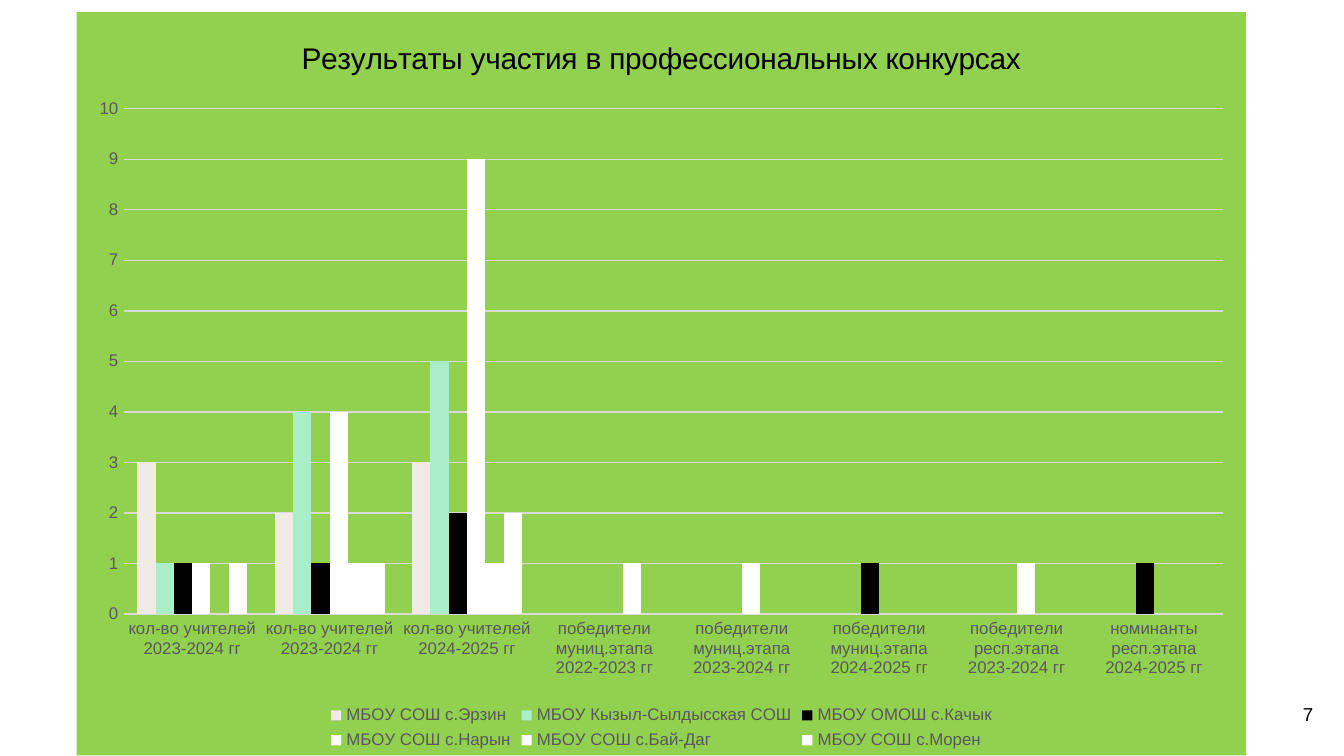
from lxml.etree import SubElement
from pptx import Presentation
from pptx.chart.data import CategoryChartData
from pptx.dml.color import RGBColor
from pptx.enum.chart import XL_CHART_TYPE, XL_LEGEND_POSITION, XL_TICK_MARK
from pptx.enum.text import MSO_ANCHOR, PP_ALIGN
from pptx.oxml import parse_xml
from pptx.oxml.ns import nsdecls, qn
from pptx.util import Cm, Pt

FONT = "Arial"
BLACK = RGBColor(0x00, 0x00, 0x00)
WHITE = RGBColor(0xFF, 0xFF, 0xFF)
GRAY = RGBColor(0x59, 0x59, 0x59)
GRID = RGBColor(0xD9, 0xD9, 0xD9)
GREEN = RGBColor(0x92, 0xD0, 0x50)
CREAM = RGBColor(0xF0, 0xEC, 0xE5)
MINT = RGBColor(0xA9, 0xED, 0xC9)

TITLE = "Результаты участия в профессиональных конкурсах"
PAGE = "7"
STAGES = [
    "кол-во учителей 2023-2024 гг",
    "кол-во учителей 2023-2024 гг",
    "кол-во учителей 2024-2025 гг",
    "победители муниц.этапа 2022-2023 гг",
    "победители муниц.этапа 2023-2024 гг",
    "победители муниц.этапа 2024-2025 гг",
    "победители респ.этапа 2023-2024 гг",
    "номинанты респ.этапа 2024-2025 гг",
]
SCHOOLS = [
    ("МБОУ СОШ с.Эрзин", CREAM, [3, 2, 3, None, None, None, None, None]),
    ("МБОУ Кызыл-Сылдысская СОШ", MINT, [1, 4, 5, None, None, None, None, None]),
    ("МБОУ ОМОШ с.Качык", BLACK, [1, 1, 2, None, None, 1, None, 1]),
    ("МБОУ СОШ с.Нарын", WHITE, [1, 4, 9, None, 1, None, 1, None]),
    ("МБОУ СОШ с.Бай-Даг", WHITE, [0, 1, 1, 1, None, None, None, None]),
    ("МБОУ СОШ с.Морен", WHITE, [1, 1, 2, None, None, None, None, None]),
]
PLOT = {"x": 0.04, "y": 0.13, "w": 0.94, "h": 0.68}


def style(font, size, color):
    font.name = FONT
    font.size = Pt(size)
    font.bold = False
    font.color.rgb = color


def write(frame, text, size=10, color=BLACK, align=PP_ALIGN.CENTER):
    para = frame.paragraphs[0]
    para.alignment = align
    run = para.add_run()
    run.text = text
    style(run.font, size, color)


def paint(chart, color):
    fill = parse_xml(
        f'<c:spPr {nsdecls("c", "a")}><a:solidFill><a:srgbClr val="{color}"/>'
        "</a:solidFill><a:ln><a:noFill/></a:ln></c:spPr>"
    )
    chart.element.find(qn("c:chart")).addnext(fill)


def place(chart, spots):
    area = chart.element.find(qn("c:chart")).find(qn("c:plotArea"))
    for old in area.findall(qn("c:layout")):
        area.remove(old)
    layout = parse_xml(f'<c:layout {nsdecls("c")}/>')
    area.insert(0, layout)
    manual = SubElement(layout, qn("c:manualLayout"))
    rules = [("layoutTarget", "inner"), ("xMode", "edge"), ("yMode", "edge")]
    for tag, value in rules + list(spots.items()):
        SubElement(manual, qn(f"c:{tag}")).set("val", str(value))


def add_results(slide):
    data = CategoryChartData()
    data.categories = STAGES
    for name, _, values in SCHOOLS:
        data.add_series(name, values)
    chart = slide.shapes.add_chart(
        XL_CHART_TYPE.COLUMN_CLUSTERED, Cm(1.45), Cm(0.23), Cm(22.1), Cm(14.05), data
    ).chart
    style(chart.font, 10, BLACK)
    paint(chart, GREEN)
    place(chart, PLOT)

    chart.has_title = True
    chart.chart_title.include_in_layout = False
    write(chart.chart_title.text_frame, TITLE, size=16)

    chart.has_legend = True
    chart.legend.position = XL_LEGEND_POSITION.BOTTOM
    chart.legend.include_in_layout = False
    style(chart.legend.font, 9, GRAY)

    for axis in (chart.category_axis, chart.value_axis):
        axis.major_tick_mark = axis.minor_tick_mark = XL_TICK_MARK.NONE
        axis.format.line.fill.background()
        style(axis.tick_labels.font, 9, GRAY)
    scale = chart.value_axis
    scale.minimum_scale, scale.maximum_scale, scale.major_unit = 0, 10, 1
    scale.has_major_gridlines = True
    scale.major_gridlines.format.line.color.rgb = GRID
    scale.major_gridlines.format.line.width = Pt(0.75)

    plot = chart.plots[0]
    plot.gap_width, plot.overlap = 150, 0
    plot.vary_by_categories = False
    for series, (_, color, _) in zip(plot.series, SCHOOLS):
        series.format.fill.solid()
        series.format.fill.fore_color.rgb = color
        series.invert_if_negative = False


def add_page(slide):
    frame = slide.shapes.add_textbox(Cm(23.55), Cm(12.95), Cm(1.52), Cm(1.09)).text_frame
    frame.word_wrap = True
    frame.vertical_anchor = MSO_ANCHOR.MIDDLE
    frame.margin_left = frame.margin_right = Cm(0.25)
    frame.margin_top = frame.margin_bottom = Cm(0.25)
    write(frame, PAGE, align=PP_ALIGN.RIGHT)


def main():
    deck = Presentation()
    deck.slide_width, deck.slide_height = Cm(25.4), Cm(14.29)
    slide = deck.slides.add_slide(deck.slide_layouts[6])
    add_page(slide)
    add_results(slide)
    deck.save("out.pptx")


if __name__ == "__main__":
    main()
